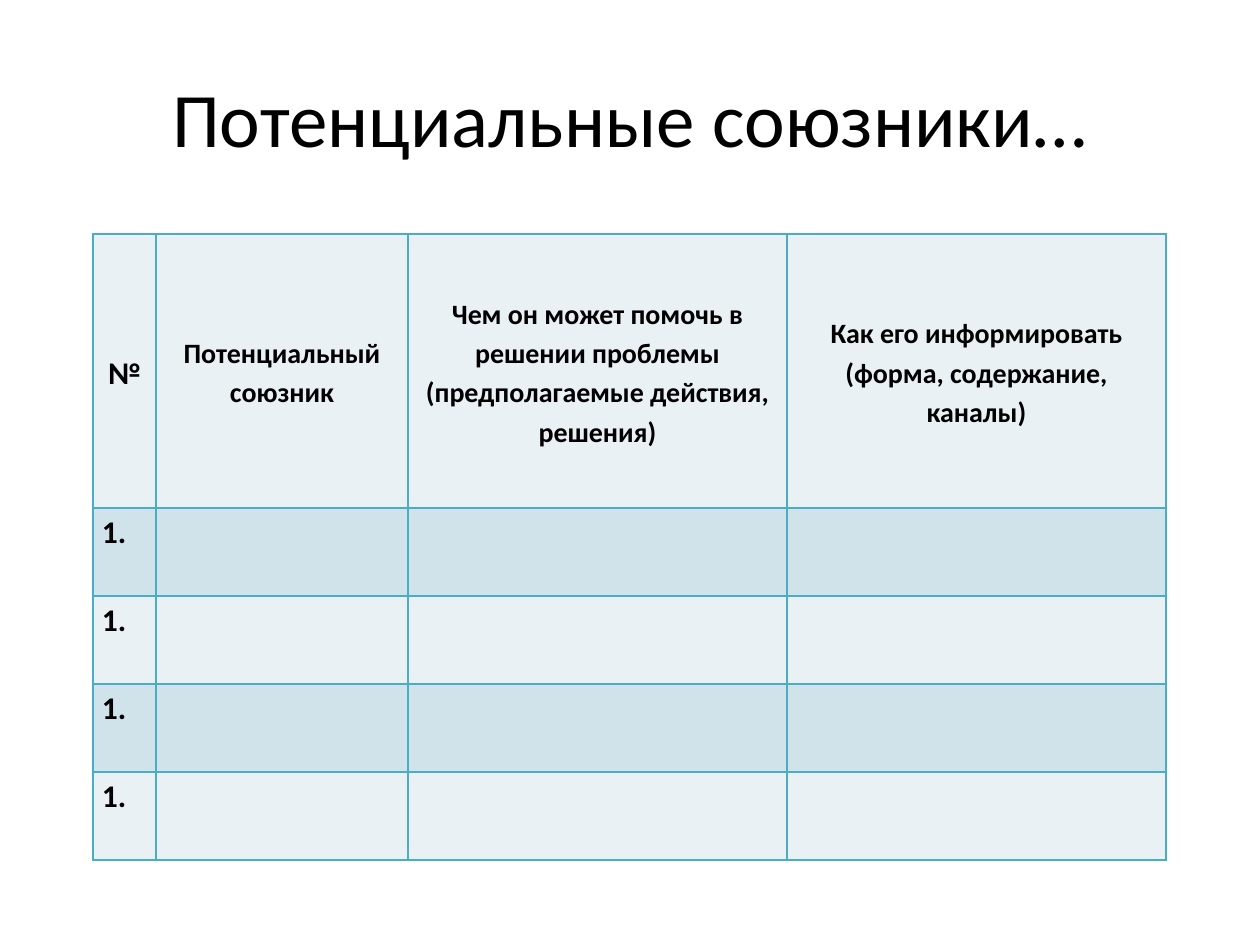
from dataclasses import dataclass

from lxml.etree import SubElement
from pptx import Presentation
from pptx.dml.color import RGBColor
from pptx.enum.text import MSO_ANCHOR, PP_ALIGN
from pptx.oxml.ns import qn
from pptx.util import Pt

# Content
TITLE = "Потенциальные союзники…"
HEADINGS = [
    "№",
    "Потенциальный союзник",
    "Чем он может помочь в решении проблемы (предполагаемые действия, решения)",
    "Как его информировать (форма, содержание, каналы)",
]
ALLY_NUMBERS = ["1."] * 4

# Layout in px
SLIDE_SIZE = (1260, 945)
TITLE_BOX = (63, 38, 1134, 158)
TABLE_LEFT, TABLE_TOP = 93, 234
COLUMN_WIDTHS = [63, 252, 379, 379]
ROW_HEIGHTS = [274] + [88] * len(ALLY_NUMBERS)
CELL_INSET = 9


@dataclass(frozen=True)
class Theme:
    font: str = "Calibri"
    ink: str = "000000"
    border: str = "4BACC6"
    bands: tuple = ("E9F1F5", "D0E3EA")
    title_size: int = 44
    number_size: int = 18
    heading_size: int = 16
    border_width: int = 1


THEME = Theme()


def px(length):
    return round(length * 914400 / 126)


def write(frame, text, *, size, bold=False, align=PP_ALIGN.LEFT, spacing=1.0):
    frame.word_wrap = True
    paragraph = frame.paragraphs[0]
    paragraph.alignment = align
    paragraph.line_spacing = spacing
    run = paragraph.add_run()
    run.text = text
    run.font.name = THEME.font
    run.font.size = Pt(size)
    run.font.bold = bold
    run.font.color.rgb = RGBColor.from_string(THEME.ink)


def style_cell(cell, fill):
    cell.margin_left = cell.margin_right = px(CELL_INSET)
    cell.margin_top = cell.margin_bottom = 0
    # Borders come before the fill in the cell properties
    properties = cell._tc.get_or_add_tcPr()
    for side in ("a:lnL", "a:lnR", "a:lnT", "a:lnB"):
        line = SubElement(properties, qn(side), w=str(Pt(THEME.border_width)))
        solid = SubElement(line, qn("a:solidFill"))
        SubElement(solid, qn("a:srgbClr"), val=THEME.border)
    cell.fill.solid()
    cell.fill.fore_color.rgb = RGBColor.from_string(fill)


def add_title(slide):
    frame = slide.shapes.add_textbox(*map(px, TITLE_BOX)).text_frame
    frame.vertical_anchor = MSO_ANCHOR.MIDDLE
    write(frame, TITLE, size=THEME.title_size, align=PP_ALIGN.CENTER)


def add_allies_table(slide):
    bounds = (TABLE_LEFT, TABLE_TOP, sum(COLUMN_WIDTHS), sum(ROW_HEIGHTS))
    allies = slide.shapes.add_table(
        len(ROW_HEIGHTS), len(COLUMN_WIDTHS), *map(px, bounds)
    ).table
    for column, width in zip(allies.columns, COLUMN_WIDTHS):
        column.width = px(width)
    for index, (row, height) in enumerate(zip(allies.rows, ROW_HEIGHTS)):
        row.height = px(height)
        for cell in row.cells:
            style_cell(cell, THEME.bands[index % 2])

    # Heading row
    for column, heading in enumerate(HEADINGS):
        cell = allies.cell(0, column)
        cell.vertical_anchor = MSO_ANCHOR.MIDDLE
        size = THEME.heading_size if column else THEME.number_size
        write(cell.text_frame, heading, size=size, bold=True,
              align=PP_ALIGN.CENTER, spacing=1.15)

    # Numbered rows
    for row, number in enumerate(ALLY_NUMBERS, start=1):
        write(allies.cell(row, 0).text_frame, number,
              size=THEME.number_size, bold=True, spacing=1.15)


def main():
    deck = Presentation()
    deck.slide_width, deck.slide_height = map(px, SLIDE_SIZE)
    slide = deck.slides.add_slide(deck.slide_layouts[6])
    add_title(slide)
    add_allies_table(slide)
    deck.save("out.pptx")


if __name__ == "__main__":
    main()
